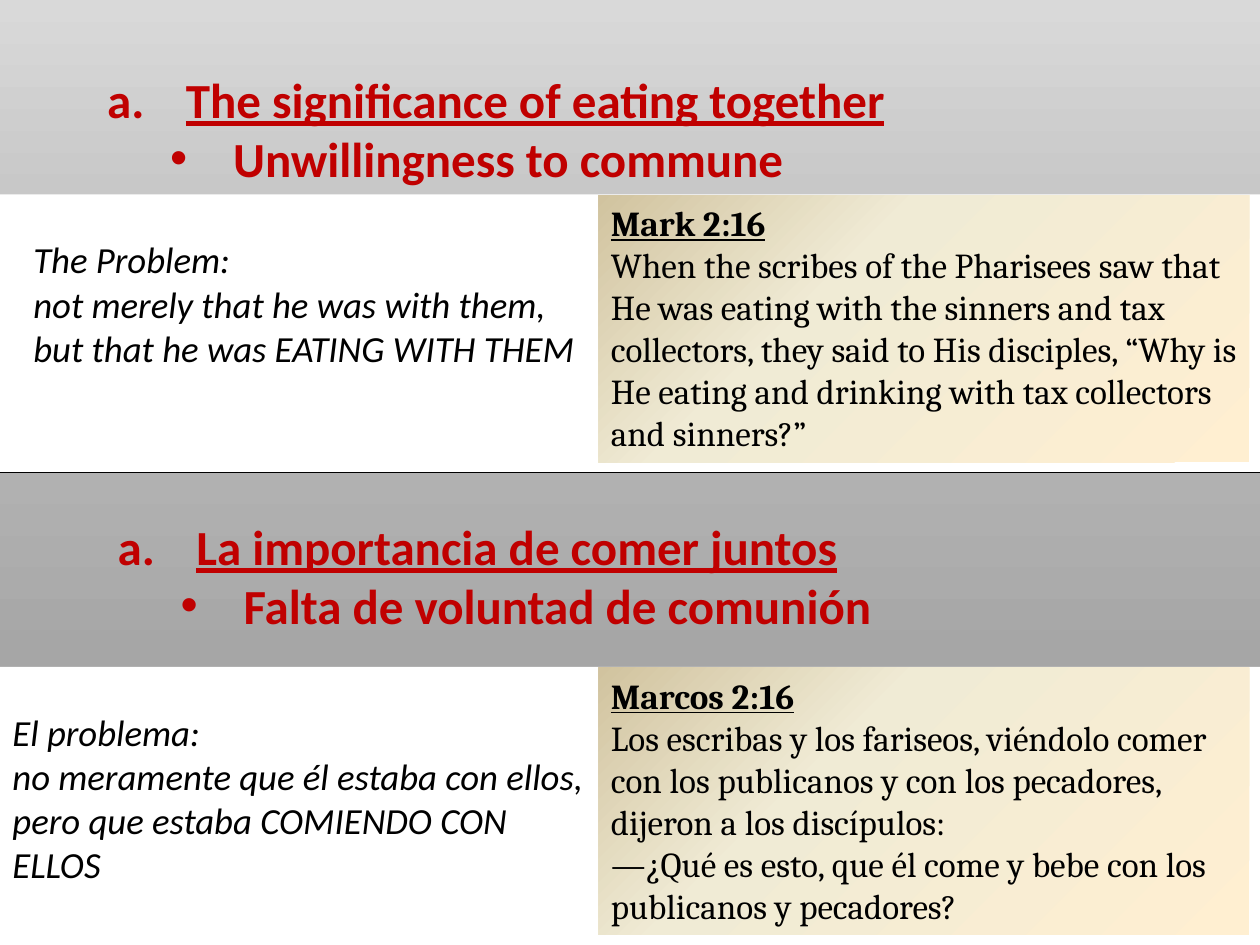
from dataclasses import dataclass

from lxml import etree
from pptx import Presentation
from pptx.dml.color import RGBColor
from pptx.enum import shapes, text
from pptx.oxml import ns
from pptx.util import Pt


@dataclass(frozen=True)
class Theme:
    heading_color: str = "C00000"
    text_color: str = "000000"
    band_color: str = "FFFFFF"
    backdrop: tuple = ((0, "D9D9D9"), (30, "BFBFBF"), (70, "A6A6A6"), (100, "808080"))
    parchment: tuple = ((0, "FFEFD1"), (65, "F0EBD5"), (100, "D1C39F"))
    sans: str = "Calibri"
    serif: str = "Cambria"
    heading_size: float = 28
    problem_size: float = 21
    verse_size: float = 20


@dataclass(frozen=True)
class Box:
    left: float
    top: float
    width: float
    height: float

    def lengths(self) -> tuple:
        return Pt(self.left), Pt(self.top), Pt(self.width), Pt(self.height)


@dataclass(frozen=True)
class Panel:
    """One language's half of the slide."""
    top: float
    heading_box: Box
    heading: str
    problem_box: Box
    problem: str
    verse: str


THEME = Theme()
SLIDE_WIDTH, SLIDE_HEIGHT = 720, 540
HALF = SLIDE_HEIGHT / 2

PANELS = (
    Panel(
        0,
        Box(54, 36, 624, 75),
        "The significance of eating together\nUnwillingness to commune",
        Box(12, 132, 324, 83.5),
        "The Problem:\nnot merely that he was with them,\n"
        "but that he was EATING WITH THEM",
        "Mark 2:16\nWhen the scribes of the Pharisees saw that He was eating with the "
        "sinners and tax collectors, they said to His disciples, “Why is He eating and "
        "drinking with tax collectors and sinners?”",
    ),
    Panel(
        HALF,
        Box(60, 291.6, 624, 75),
        "La importancia de comer juntos\nFalta de voluntad de comunión",
        Box(0, 402, 342, 108.7),
        "El problema:\nno meramente que él estaba con ellos,\n"
        "pero que estaba COMIENDO CON ELLOS",
        "Marcos 2:16\nLos escribas y los fariseos, viéndolo comer con los publicanos y "
        "con los pecadores, dijeron a los discípulos:\n"
        "—¿Qué es esto, que él come y bebe con los publicanos y pecadores?",
    ),
)


def fill_gradient(fill, owner, stops: tuple, clockwise_angle: float) -> None:
    """Fill with any number of (percent, colour) stops; owner is the XML holding the fill."""
    fill.gradient()
    fill.gradient_angle = 360 - clockwise_angle
    stop_list = owner.find(".//" + ns.qn("a:gsLst"))
    for stop in list(stop_list):
        stop_list.remove(stop)
    for percent, color in stops:
        stop = etree.SubElement(stop_list, ns.qn("a:gs"), pos=str(percent * 1000))
        etree.SubElement(stop, ns.qn("a:srgbClr"), val=color)


def write_text(shape, content: str, font_name: str, size: float, color: str) -> list:
    """Set left-aligned text in one plain style and return its paragraphs."""
    frame = shape.text_frame
    frame.text = content
    frame.word_wrap = True
    frame.auto_size = text.MSO_AUTO_SIZE.SHAPE_TO_FIT_TEXT
    frame.vertical_anchor = text.MSO_ANCHOR.TOP
    for paragraph in frame.paragraphs:
        paragraph.alignment = text.PP_ALIGN.LEFT
        paragraph.space_before = Pt(0)
        for run in paragraph.runs:
            run.font.name = font_name
            run.font.size = Pt(size)
            run.font.color.rgb = RGBColor.from_string(color)
    return list(frame.paragraphs)


def set_marker(paragraph, indent: float, hanging: float, tag: str, **attributes: str) -> None:
    properties = paragraph._p.get_or_add_pPr()
    properties.set("marL", str(Pt(indent)))
    properties.set("indent", str(-Pt(hanging)))
    etree.SubElement(properties, ns.qn("a:buFont"),
                     typeface="Arial" if tag == "a:buChar" else "+mj-lt")
    etree.SubElement(properties, ns.qn(tag), **attributes)


def draw_heading(placeholder, panel: Panel) -> None:
    (placeholder.left, placeholder.top,
     placeholder.width, placeholder.height) = panel.heading_box.lengths()
    topic, point = write_text(placeholder, panel.heading, THEME.sans,
                              THEME.heading_size, THEME.heading_color)
    for paragraph in (topic, point):
        paragraph.runs[0].font.bold = True
    topic.runs[0].font.underline = True
    point.level = 1
    set_marker(topic, 45, 45, "a:buAutoNum", type="alphaLcPeriod")
    set_marker(point, 72, 36, "a:buChar", char="•")


def add_rectangle(slide, box: Box):
    rectangle = slide.shapes.add_shape(shapes.MSO_SHAPE.RECTANGLE, *box.lengths())
    rectangle.shadow.inherit = False
    rectangle.line.fill.background()
    return rectangle


def draw_band(slide, panel: Panel) -> None:
    band = add_rectangle(slide, Box(0, panel.top + 111, SLIDE_WIDTH, HALF - 111))
    band.fill.solid()
    band.fill.fore_color.rgb = RGBColor.from_string(THEME.band_color)


def draw_verse(slide, panel: Panel) -> None:
    verse = add_rectangle(slide, Box(342, panel.top + 111.6, 372, 152.6))
    fill_gradient(verse.fill, verse.element, THEME.parchment, 225)
    reference = write_text(verse, panel.verse, THEME.serif,
                           THEME.verse_size, THEME.text_color)[0]
    reference.runs[0].font.bold = True
    reference.runs[0].font.underline = True


def draw_problem(slide, panel: Panel) -> None:
    problem = slide.shapes.add_textbox(*panel.problem_box.lengths())
    for paragraph in write_text(problem, panel.problem, THEME.sans,
                                THEME.problem_size, THEME.text_color):
        paragraph.runs[0].font.italic = True


def draw_divider(slide) -> None:
    divider = slide.shapes.add_connector(
        shapes.MSO_CONNECTOR.STRAIGHT, Pt(0), Pt(HALF), Pt(SLIDE_WIDTH), Pt(HALF))
    divider.line.color.rgb = RGBColor.from_string(THEME.text_color)
    divider.line.width = Pt(0.75)
    etree.SubElement(divider.element.spPr, ns.qn("a:effectLst"))


def main() -> None:
    presentation = Presentation()
    presentation.slide_width = Pt(SLIDE_WIDTH)
    presentation.slide_height = Pt(SLIDE_HEIGHT)
    slide = presentation.slides.add_slide(presentation.slide_layouts[1])
    fill_gradient(slide.background.fill, slide.element, THEME.backdrop, 90)
    headings = (slide.shapes.title, slide.placeholders[1])
    for panel, heading in zip(PANELS, headings):
        draw_band(slide, panel)
        draw_verse(slide, panel)
        draw_problem(slide, panel)
        draw_heading(heading, panel)
    draw_divider(slide)
    presentation.save("out.pptx")


if __name__ == "__main__":
    main()
